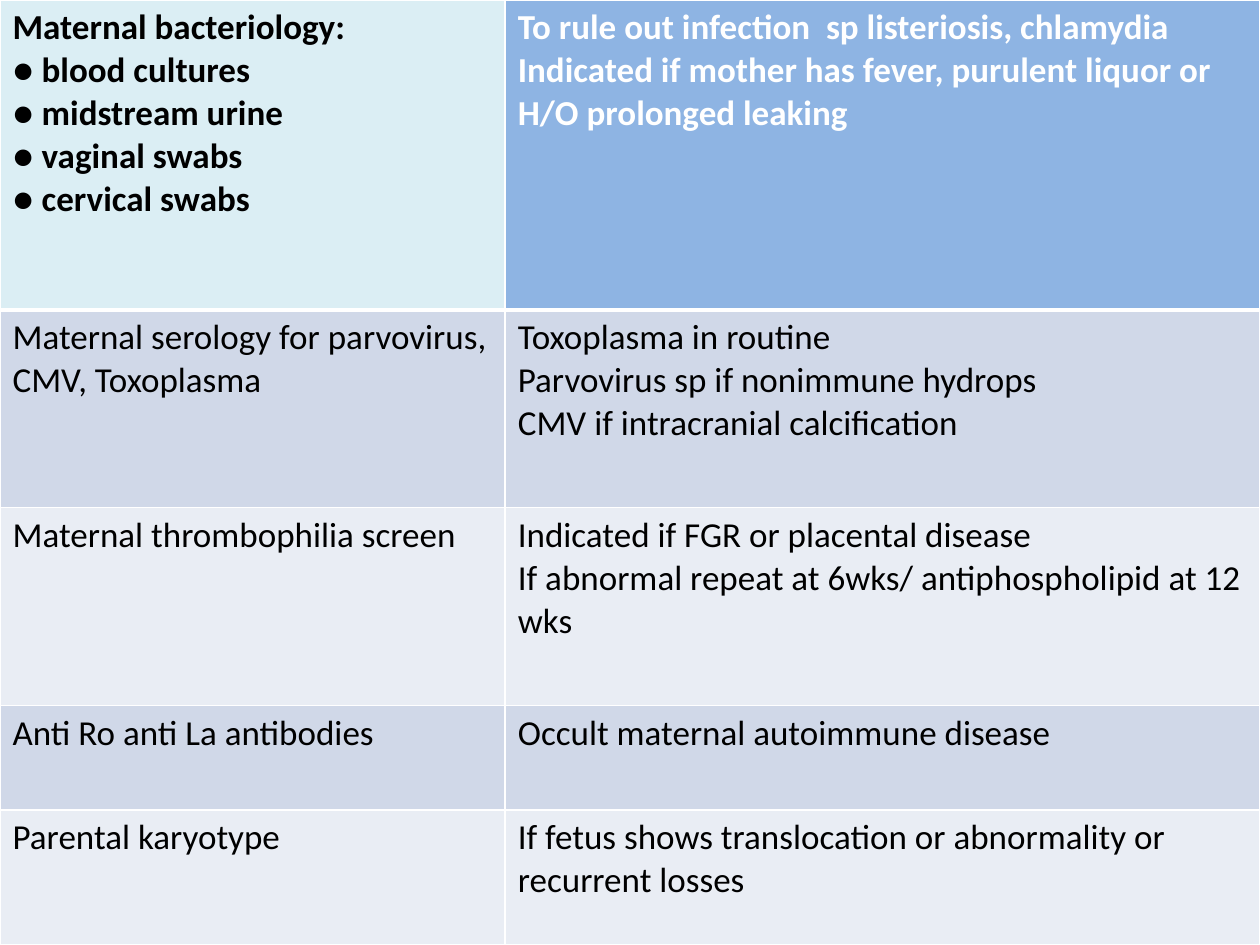
"""Build a slide with a table of maternal investigations and their indications."""
from typing import NamedTuple

from lxml.etree import SubElement
from pptx import Presentation
from pptx.dml.color import RGBColor
from pptx.oxml.ns import qn
from pptx.table import _Cell as Cell
from pptx.util import Inches, Pt

BLACK = RGBColor(0x00, 0x00, 0x00)
WHITE = RGBColor(0xFF, 0xFF, 0xFF)
PALE_AQUA = RGBColor(0xDB, 0xEE, 0xF4)
SKY_BLUE = RGBColor(0x8E, 0xB4, 0xE3)
BAND_DARK = RGBColor(0xD0, 0xD8, 0xE8)
BAND_LIGHT = RGBColor(0xE9, 0xED, 0xF4)

COLUMN_WIDTHS = (4.01, 5.99)
THIN, THICK = 1, 3


class Investigation(NamedTuple):
    height: float
    tests: list[str]
    indications: list[str]


INVESTIGATIONS = [
    Investigation(
        2.46,
        ["Maternal bacteriology:", "● blood cultures", "● midstream urine",
         "● vaginal swabs", "● cervical swabs"],
        ["To rule out infection  sp listeriosis, chlamydia",
         "Indicated if mother has fever, purulent liquor or H/O prolonged leaking"],
    ),
    Investigation(
        1.57,
        ["Maternal serology for parvovirus, CMV, Toxoplasma"],
        ["Toxoplasma in routine", "Parvovirus sp if nonimmune hydrops",
         "CMV if intracranial calcification"],
    ),
    Investigation(
        1.57,
        ["Maternal thrombophilia screen"],
        ["Indicated if FGR or placental disease",
         "If abnormal repeat at 6wks/ antiphospholipid at 12 wks"],
    ),
    Investigation(
        0.83, ["Anti Ro anti La antibodies"], ["Occult maternal autoimmune disease"]
    ),
    Investigation(
        1.07,
        ["Parental karyotype"],
        ["If fetus shows translocation or abnormality or recurrent losses"],
    ),
]


def draw_borders(cell: Cell, top: int, bottom: int) -> None:
    properties = cell._tc.get_or_add_tcPr()
    widths = {"a:lnL": THIN, "a:lnR": THIN, "a:lnT": top, "a:lnB": bottom}
    for tag, width in widths.items():
        line = SubElement(properties, qn(tag), w=str(Pt(width)))
        fill = SubElement(line, qn("a:solidFill"))
        SubElement(fill, qn("a:srgbClr"), val=str(WHITE))


def fill_cell(cell: Cell, lines: list[str], fill: RGBColor,
              color: RGBColor, bold: bool) -> None:
    cell.fill.solid()
    cell.fill.fore_color.rgb = fill
    cell.text = "\n".join(lines)
    font_format = {"name": "Calibri", "size": Pt(20), "bold": bold}
    for para in cell.text_frame.paragraphs:
        for span in para.runs:
            for name, value in font_format.items():
                setattr(span.font, name, value)
            span.font.color.rgb = color


def main() -> None:
    deck = Presentation()
    deck.slide_width, deck.slide_height = Inches(10), Inches(7.5)
    page = deck.slides.add_slide(deck.slide_layouts[6])
    table = page.shapes.add_table(
        len(INVESTIGATIONS), len(COLUMN_WIDTHS),
        Inches(0), Inches(0), deck.slide_width, deck.slide_height,
    ).table
    for column, width in zip(table.columns, COLUMN_WIDTHS):
        column.width = Inches(width)

    for index, investigation in enumerate(INVESTIGATIONS):
        table.rows[index].height = Inches(investigation.height)
        is_header = index == 0
        band = BAND_DARK if index % 2 else BAND_LIGHT
        fills = (PALE_AQUA, SKY_BLUE) if is_header else (band, band)
        colors = (BLACK, WHITE) if is_header else (BLACK, BLACK)
        texts = (investigation.tests, investigation.indications)
        for position, (lines, fill, color) in enumerate(zip(texts, fills, colors)):
            cell = table.cell(index, position)
            draw_borders(cell, THICK if index == 1 else THIN,
                         THICK if is_header else THIN)
            fill_cell(cell, lines, fill, color, is_header)

    deck.save("out.pptx")


if __name__ == "__main__":
    main()
